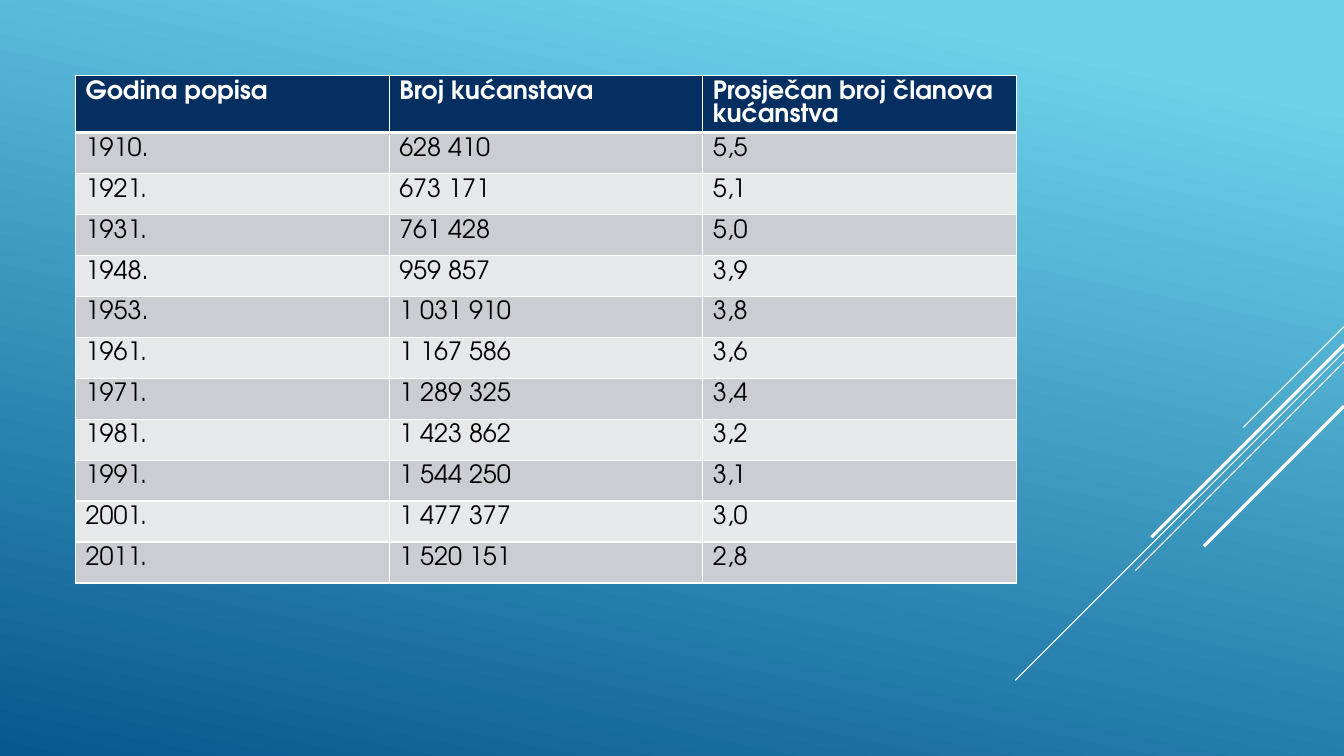
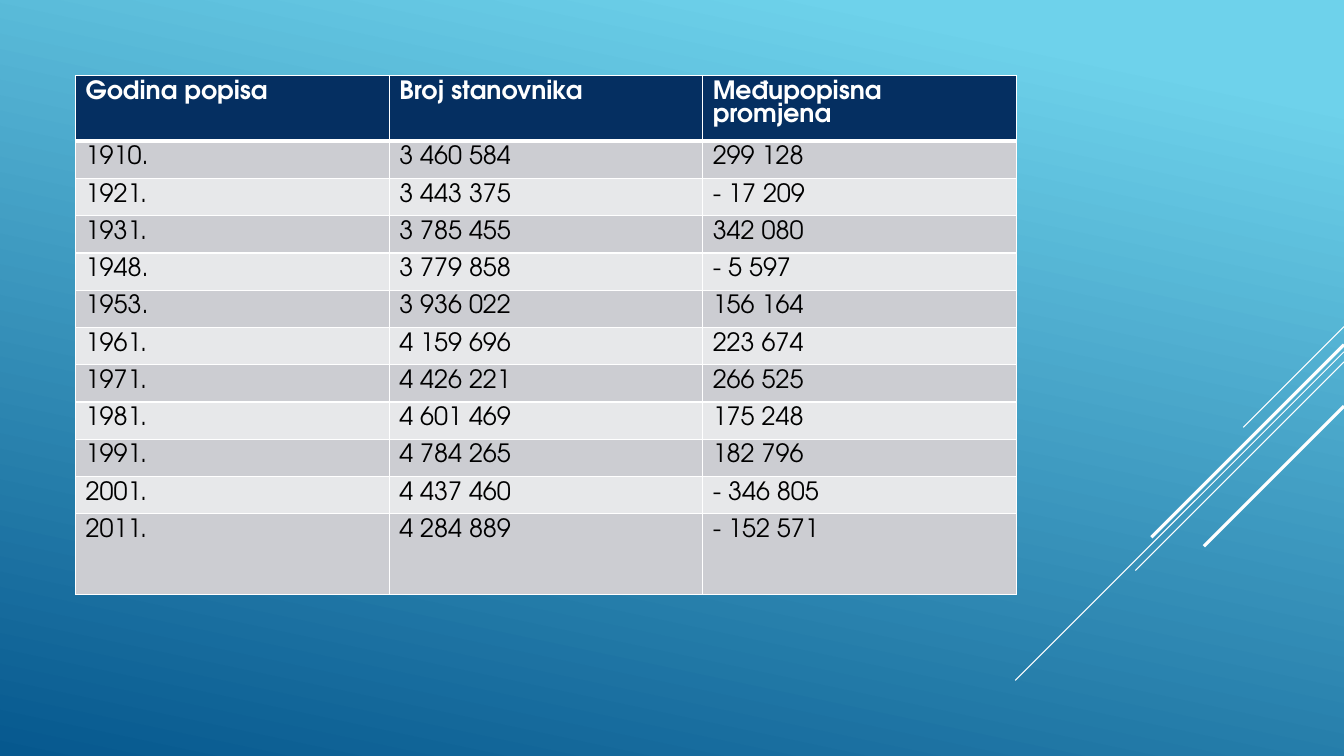
from lxml.etree import SubElement
from pptx import Presentation
from pptx.dml.color import RGBColor
from pptx.enum.shapes import MSO_CONNECTOR
from pptx.oxml.ns import qn
from pptx.util import Inches, Pt

# Content
YEARS = ["1910.", "1921.", "1931.", "1948.", "1953.", "1961.",
         "1971.", "1981.", "1991.", "2001.", "2011."]
TABLES = [
    dict(
        header=("Godina popisa", "Broj kućanstava",
                "Prosječan broj članova kućanstva"),
        counts=["628 410", "673 171", "761 428", "959 857", "1 031 910",
                "1 167 586", "1 289 325", "1 423 862", "1 544 250",
                "1 477 377", "1 520 151"],
        changes=["5,5", "5,1", "5,0", "3,9", "3,8", "3,6",
                 "3,4", "3,2", "3,1", "3,0", "2,8"],
        head_h=0.56, row_h=4.47 / len(YEARS), last_h=4.47 / len(YEARS)),
    dict(
        header=("Godina popisa", "Broj stanovnika", "Međupopisna promjena"),
        counts=["3 460 584", "3 443 375", "3 785 455", "3 779 858",
                "3 936 022", "4 159 696", "4 426 221", "4 601 469",
                "4 784 265", "4 437 460", "4 284 889"],
        changes=["299 128", "- 17 209", "342 080", "- 5 597", "156 164",
                 "223 674", "266 525", "175 248", "182 796",
                 "- 346 805", "- 152 571"],
        head_h=0.65, row_h=0.37, last_h=0.8),
]

# Shared look
W, H = 13.33, 7.5
FONT = "TeX Gyre Adventor"
COLORS = dict(sky="6ED2EB", sea="06588E", navy="052F61", white="FFFFFF",
              black="000000", dark_band="CCCDD2", light_band="E7E8EA")
MARGIN, COL_W = 0.75, 3.11
# Diagonals at 45 degrees from the right edge: top, run, weight
DIAGONALS = [(3.24, 1, 0.75), (3.49, 3.26, 0.75), (3.59, 2.07, 0.75),
             (3.42, 1.91, 2.25), (4.03, 1.39, 2.25)]


def rgb(name):
    return RGBColor.from_string(COLORS[name])


def paint_background(master):
    fill = master.background.fill
    fill.gradient()
    fill.gradient_angle = 360 - 102
    for stop, (pos, color) in zip(fill.gradient_stops,
                                  [(0.1, "sky"), (1, "sea")]):
        stop.position = pos
        stop.color.rgb = rgb(color)


def add_diagonals(master, s):
    """Draw the lines on a slide, then move them to its master."""
    for top, run, weight in DIAGONALS:
        line = s.shapes.add_connector(
            MSO_CONNECTOR.STRAIGHT, Inches(W), Inches(top),
            Inches(W - run), Inches(top + run))
        line.line.color.rgb = rgb("white")
        line.line.width = Pt(weight)
        SubElement(line.element.spPr, qn("a:effectLst"))
        master.shapes.element.append(line.element)


def set_borders(cell, **widths):
    tc_pr = cell._tc.get_or_add_tcPr()
    for side, width in widths.items():
        ln = SubElement(tc_pr, qn("a:ln" + side), w=str(Pt(width)))
        fill = SubElement(ln, qn("a:solidFill"))
        SubElement(fill, qn("a:srgbClr"), val=COLORS["white"])


def write_cell(cell, text, *, fill, color="black", bold=False):
    cell.fill.solid()
    cell.fill.fore_color.rgb = rgb(fill)
    r = cell.text_frame.paragraphs[0].add_run()
    r.text = text
    r.font.name, r.font.size, r.font.bold = FONT, Pt(18), bold
    r.font.color.rgb = rgb(color)


def add_census_table(s, header, counts, changes, head_h, row_h, last_h):
    rows = [header, *zip(YEARS, counts, changes)]
    heights = [head_h] + [row_h] * (len(rows) - 2) + [last_h]
    table = s.shapes.add_table(
        len(rows), len(header), Inches(MARGIN), Inches(MARGIN),
        Inches(COL_W * len(header)), Inches(sum(heights))).table
    for column in table.columns:
        column.width = Inches(COL_W)
    for i, (row, height) in enumerate(zip(rows, heights)):
        table.rows[i].height = Inches(height)
        for j, text in enumerate(row):
            cell = table.cell(i, j)
            if i == 0:
                set_borders(cell, L=1, R=1, T=1, B=3)
                write_cell(cell, text, fill="navy", color="white", bold=True)
            else:
                set_borders(cell, L=1, R=1, B=1)
                write_cell(cell, text,
                           fill="dark_band" if i % 2 else "light_band")


# Build the slides
prs = Presentation()
prs.slide_width, prs.slide_height = Inches(W), Inches(H)
blank = prs.slide_layouts[6]
slides = [prs.slides.add_slide(blank) for _ in TABLES]
paint_background(prs.slide_master)
add_diagonals(prs.slide_master, slides[0])
for s, content in zip(slides, TABLES):
    add_census_table(s, **content)
prs.save("out.pptx")
